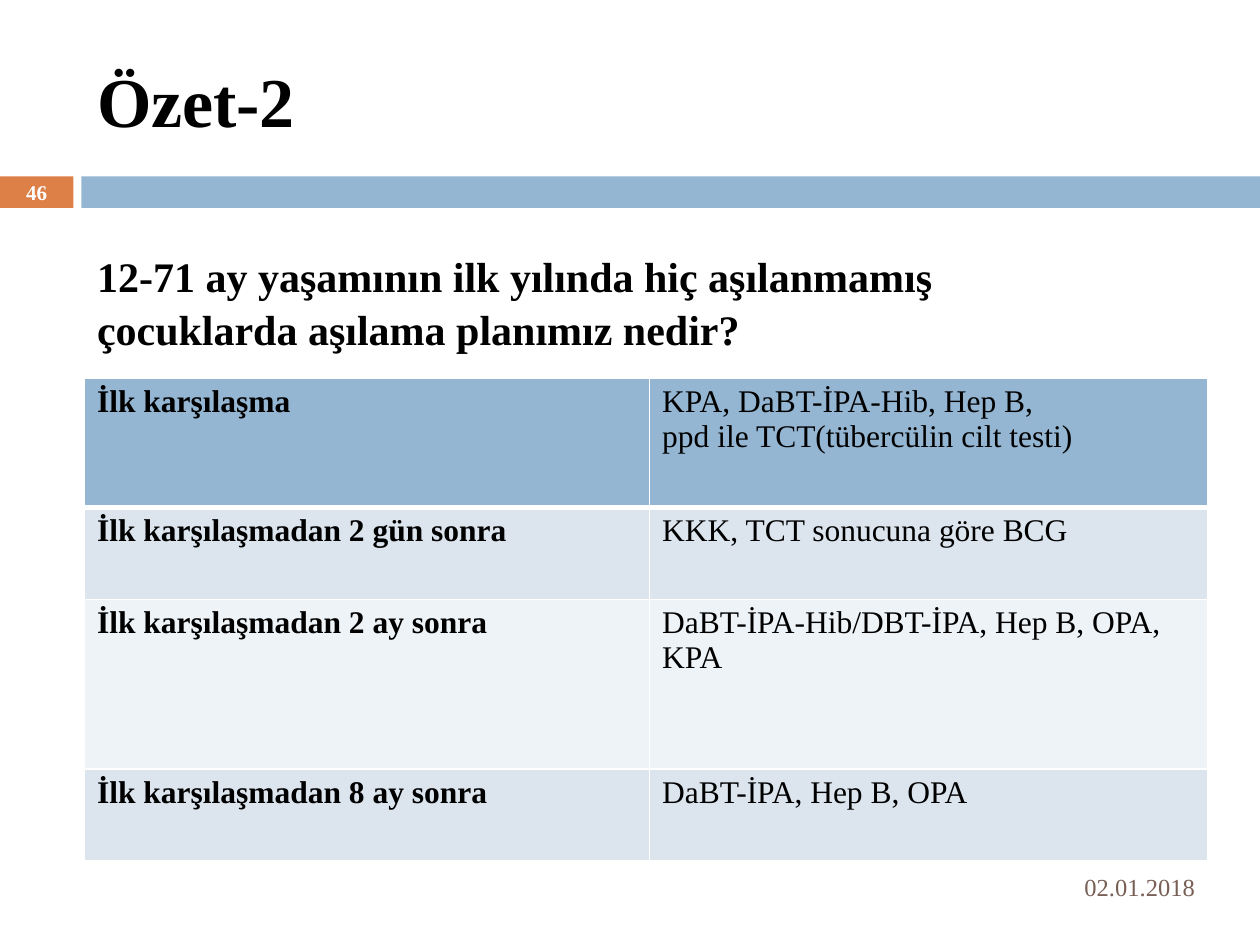
import pptx
import pptx.util
import pptx.dml.color
import pptx.enum.shapes
import pptx.enum.text
import pptx.oxml
import pptx.oxml.ns

Pt = pptx.util.Pt
ALIGN = pptx.enum.text.PP_ALIGN
ANCHOR = pptx.enum.text.MSO_ANCHOR

COLORS = {
    "text": "000000", "white": "FFFFFF", "date": "775F55", "accent": "DD8047",
    "header": "94B6D2", "band": "DCE5EE", "light": "EEF3F7",
}
FONT = "Times New Roman"
HEADING = "Özet-2"
QUESTION = "12-71 ay yaşamının ilk yılında hiç aşılanmamış çocuklarda aşılama planımız nedir?"
DATE = "02.01.2018"
PAGE = "46"
SCHEDULE = [
    ("İlk karşılaşma", "KPA, DaBT-İPA-Hib, Hep B,\nppd ile TCT(tübercülin cilt testi)"),
    ("İlk karşılaşmadan 2 gün sonra", "KKK, TCT sonucuna göre BCG"),
    ("İlk karşılaşmadan 2 ay sonra", "DaBT-İPA-Hib/DBT-İPA, Hep B, OPA, KPA"),
    ("İlk karşılaşmadan 8 ay sonra", "DaBT-İPA, Hep B, OPA"),
]
COLUMN_WIDTHS = [323, 319]
ROW_HEIGHTS = [74, 52.5, 97, 52.5]
LEFT = 48.25
BAND_TOP, BAND_HEIGHT = 100.8, 18
BANDS = [(0, 42, "accent"), (46.5, 673.5, "header")]


def rgb(name):
    return pptx.dml.color.RGBColor.from_string(COLORS[name])


def place(part, left, top, width, height):
    box = {"left": left, "top": top, "width": width, "height": height}
    for side, length in box.items():
        setattr(part, side, Pt(length))


def write(frame, text, size, color="text", bold=False, align=ALIGN.LEFT, **paragraph_format):
    frame.text = text
    for paragraph in frame.paragraphs:
        for key, value in {"alignment": align, **paragraph_format}.items():
            setattr(paragraph, key, value)
        for run in paragraph.runs:
            for key, value in {"name": FONT, "size": Pt(size), "bold": bold}.items():
                setattr(run.font, key, value)
            run.font.color.rgb = rgb(color)


def setup_frame(frame, anchor):
    settings = {"word_wrap": True, "vertical_anchor": anchor,
                "auto_size": pptx.enum.text.MSO_AUTO_SIZE.NONE}
    for key, value in settings.items():
        setattr(frame, key, value)


def add_label(slide, box, text, size, color, **text_format):
    label = slide.shapes.add_textbox(*map(Pt, box))
    setup_frame(label.text_frame, ANCHOR.MIDDLE)
    write(label.text_frame, text, size, color, **text_format)


def add_borders(cell, widths):
    properties = cell._tc.get_or_add_tcPr()
    for side, width in zip("LRTB", widths):
        properties.append(pptx.oxml.parse_xml(
            f'<a:ln{side} {pptx.oxml.ns.nsdecls("a")} w="{int(Pt(width))}"><a:solidFill>'
            f'<a:srgbClr val="{COLORS["white"]}"/></a:solidFill></a:ln{side}>'))


def add_schedule(slide):
    schedule = slide.shapes.add_table(
        len(SCHEDULE), len(COLUMN_WIDTHS), Pt(LEFT), Pt(216),
        Pt(sum(COLUMN_WIDTHS)), Pt(sum(ROW_HEIGHTS))).table
    for column, width in zip(schedule.columns, COLUMN_WIDTHS):
        column.width = Pt(width)
    for index, (entries, height) in enumerate(zip(SCHEDULE, ROW_HEIGHTS)):
        schedule.rows[index].height = Pt(height)
        fill = "header" if index == 0 else ("light", "band")[index % 2]
        borders = (1, 1, 3 if index == 1 else 1, 3 if index == 0 else 1)
        for column, entry in enumerate(entries):
            cell = schedule.cell(index, column)
            write(cell.text_frame, entry, 18, bold=column == 0)
            add_borders(cell, borders)
            cell.fill.solid()
            cell.fill.fore_color.rgb = rgb(fill)


def main():
    deck = pptx.Presentation()
    deck.slide_width, deck.slide_height = Pt(720), Pt(540)
    slide = deck.slides.add_slide(deck.slide_layouts[1])

    for left, width, color in BANDS:
        band = slide.shapes.add_shape(
            pptx.enum.shapes.MSO_SHAPE.RECTANGLE,
            Pt(left), Pt(BAND_TOP), Pt(width), Pt(BAND_HEIGHT))
        band.shadow.inherit = False
        band.fill.solid()
        band.fill.fore_color.rgb = rgb(color)
        band.line.fill.background()

    heading = slide.shapes.title
    place(heading, LEFT, 18, 642, 78)
    setup_frame(heading.text_frame, ANCHOR.MIDDLE)
    write(heading.text_frame, HEADING, 40, bold=True)

    question = slide.placeholders[1]
    place(question, LEFT, 138, 612, 87)
    setup_frame(question.text_frame, ANCHOR.TOP)
    write(question.text_frame, QUESTION, 24, bold=True, line_spacing=1.05, space_before=Pt(0))
    bullet = question.text_frame.paragraphs[0]._p.get_or_add_pPr()
    for key in ("marL", "indent"):
        bullet.set(key, "0")
    bullet.append(pptx.oxml.parse_xml(f'<a:buNone {pptx.oxml.ns.nsdecls("a")}/>'))

    add_label(slide, (480, 492, 210, 29), DATE, 14, "date", align=ALIGN.RIGHT)
    add_label(slide, (0, 100, 42, 19.5), PAGE, 12, "white", bold=True, align=ALIGN.CENTER)
    add_schedule(slide)
    deck.save("out.pptx")


if __name__ == "__main__":
    main()
